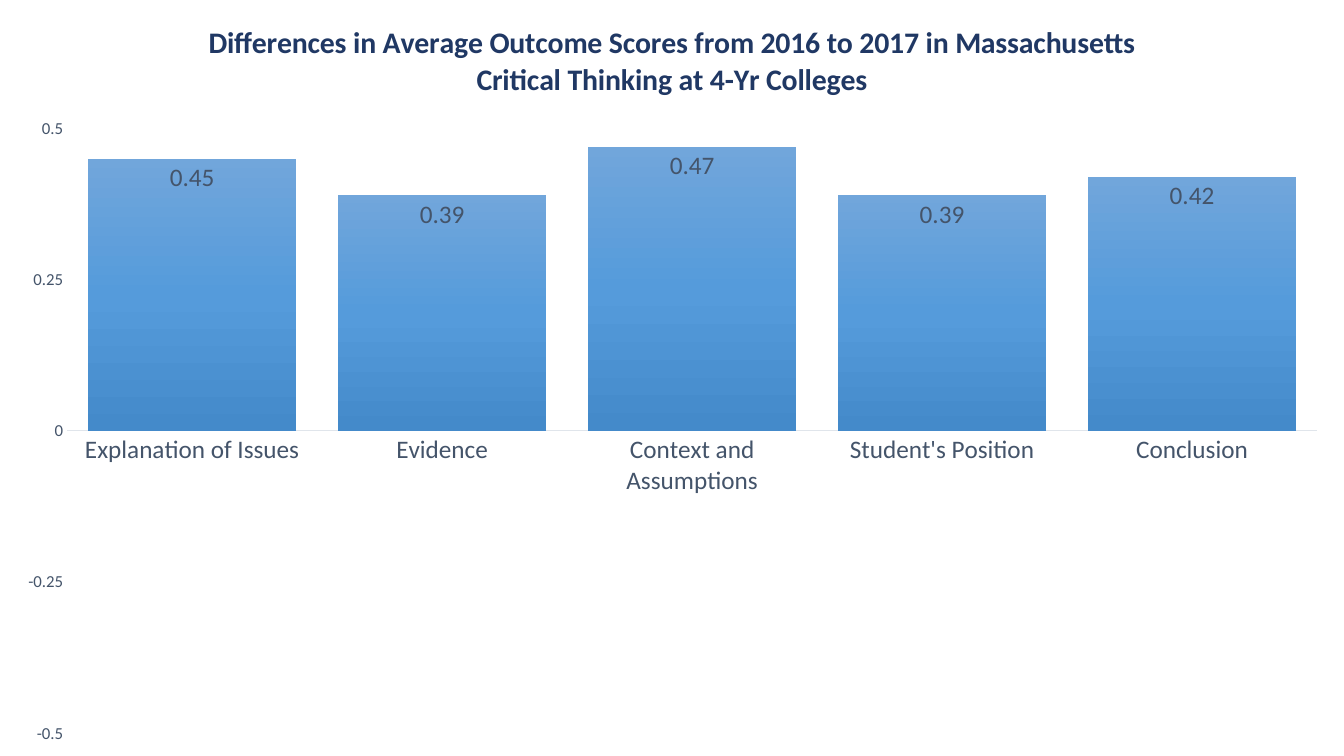
from copy import deepcopy

from lxml.etree import SubElement
from pptx import Presentation
from pptx.chart.data import CategoryChartData
from pptx.dml.color import RGBColor
from pptx.enum.chart import XL_CHART_TYPE as ChartType
from pptx.enum.chart import XL_LABEL_POSITION as LabelPosition
from pptx.enum.chart import XL_TICK_MARK as TickMark
from pptx.enum.text import PP_ALIGN as Align
from pptx.oxml.ns import qn
from pptx.util import Inches, Pt

THEME = {
    "font": "Calibri",
    "title": "203864",
    "text": "44546A",
    "axis": "E0E5EB",
    "bar": [(0, "71A6DB"), (0.5, "559BDB"), (1, "448ACA")],
    "title_size": 21.3,
    "label_size": 18,
    "scale_size": 12,
}
TITLE = [
    "Differences in Average Outcome Scores from 2016 to 2017 in Massachusetts",
    "Critical Thinking at 4-Yr Colleges",
]
SCORES = {
    "Explanation of Issues": 0.45,
    "Evidence": 0.39,
    "Context and Assumptions": 0.47,
    "Student's Position": 0.39,
    "Conclusion": 0.42,
}
PLOT_SHARES = {"x": 0.05, "y": 0.17, "w": 0.93, "h": 0.8}


def style_font(font, size, color=THEME["text"], bold=False):
    font.name = THEME["font"]
    font.size = Pt(size)
    font.bold = bold
    font.color.rgb = RGBColor.from_string(color)


def write_text(text_frame, lines, align=Align.CENTER, **font_format):
    """Write one paragraph per line, all in the same format."""
    for index, line in enumerate(lines):
        paragraph = text_frame.add_paragraph() if index else text_frame.paragraphs[0]
        paragraph.alignment = align
        run = paragraph.add_run()
        run.text = line
        style_font(run.font, **font_format)


presentation = Presentation()
presentation.slide_width = Inches(13.33)
presentation.slide_height = Inches(7.5)
slide = presentation.slides.add_slide(presentation.slide_layouts[6])

# Chart and title
chart_data = CategoryChartData()
chart_data.categories = list(SCORES)
chart_data.add_series("Series 1", list(SCORES.values()))
chart = slide.shapes.add_chart(
    ChartType.COLUMN_CLUSTERED, 0, 0,
    presentation.slide_width, presentation.slide_height, chart_data,
).chart
style_font(chart.font, THEME["scale_size"])
chart.has_legend = False
chart.has_title = True
chart.chart_title.include_in_layout = False
write_text(chart.chart_title.text_frame, TITLE, size=THEME["title_size"],
           color=THEME["title"], bold=True)

# Plot area as shares of the slide
plot_area = chart._chartSpace.chart.plotArea
for old_layout in plot_area.findall(qn("c:layout")):
    plot_area.remove(old_layout)
layout = SubElement(plot_area, qn("c:layout"))
plot_area.insert(0, layout)
manual_layout = SubElement(layout, qn("c:manualLayout"))
settings = {"layoutTarget": "inner", "xMode": "edge", "yMode": "edge", **PLOT_SHARES}
for name, value in settings.items():
    SubElement(manual_layout, qn(f"c:{name}")).set("val", str(value))

# Axes
category_axis, value_axis = chart.category_axis, chart.value_axis
for axis, size in ((category_axis, THEME["label_size"]), (value_axis, THEME["scale_size"])):
    axis.major_tick_mark = axis.minor_tick_mark = TickMark.NONE
    axis.has_major_gridlines = False
    style_font(axis.tick_labels.font, size)
category_axis.format.line.color.rgb = RGBColor.from_string(THEME["axis"])
category_axis.format.line.width = Pt(0.75)
value_axis.format.line.fill.background()
value_axis.minimum_scale, value_axis.maximum_scale = -0.5, 0.5
value_axis.major_unit = 0.25
value_axis.tick_labels.number_format = "General"
value_axis.tick_labels.number_format_is_linked = False

# Columns
plot = chart.plots[0]
plot.gap_width = 20
plot.overlap = -24
plot.vary_by_categories = False
series = plot.series[0]
series.invert_if_negative = False
fill = series.format.fill
fill.gradient()
fill.gradient_angle = 270
stop_list = next(series._element.iter(qn("a:gsLst")))
stop_list.append(deepcopy(stop_list[0]))
for stop, (position, color) in zip(fill.gradient_stops, THEME["bar"]):
    stop.position = position
    stop.color.rgb = RGBColor.from_string(color)

labels = series.data_labels
labels.show_value = True
labels.position = LabelPosition.INSIDE_END
style_font(labels.font, THEME["label_size"])

presentation.save("out.pptx")
